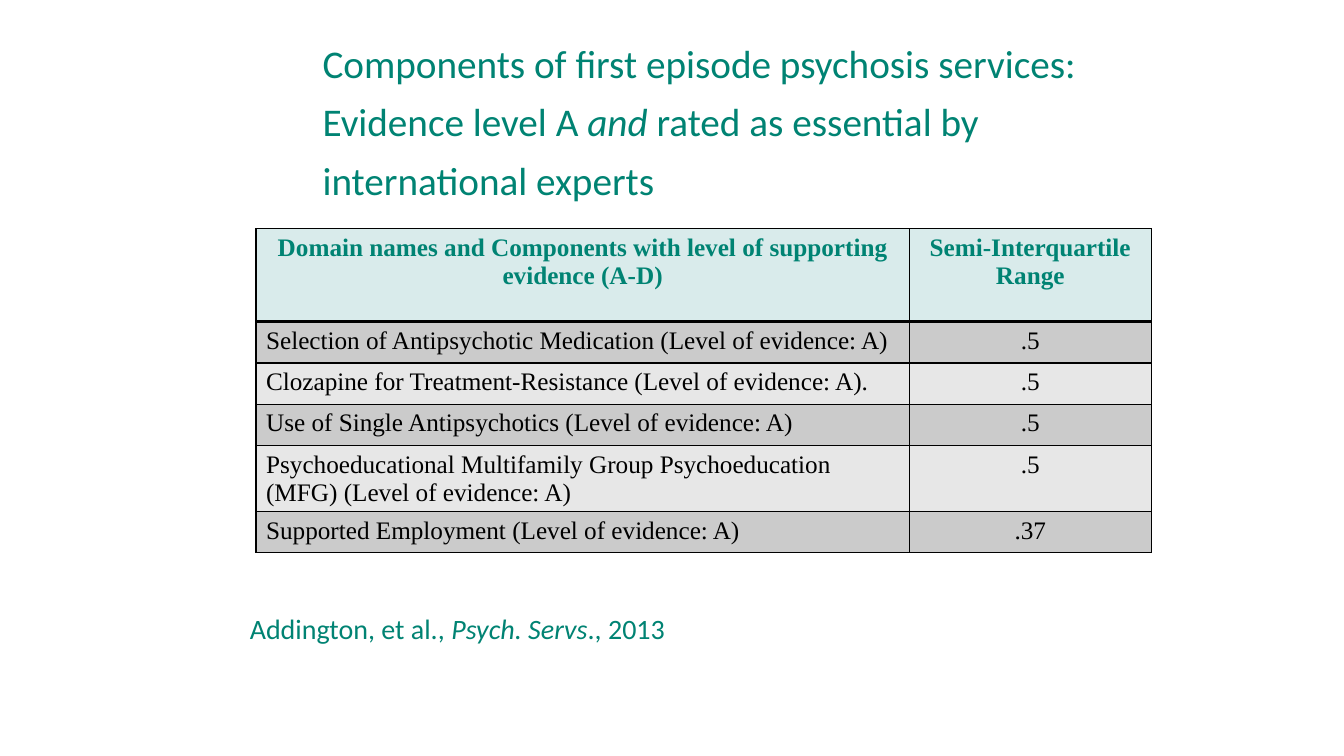
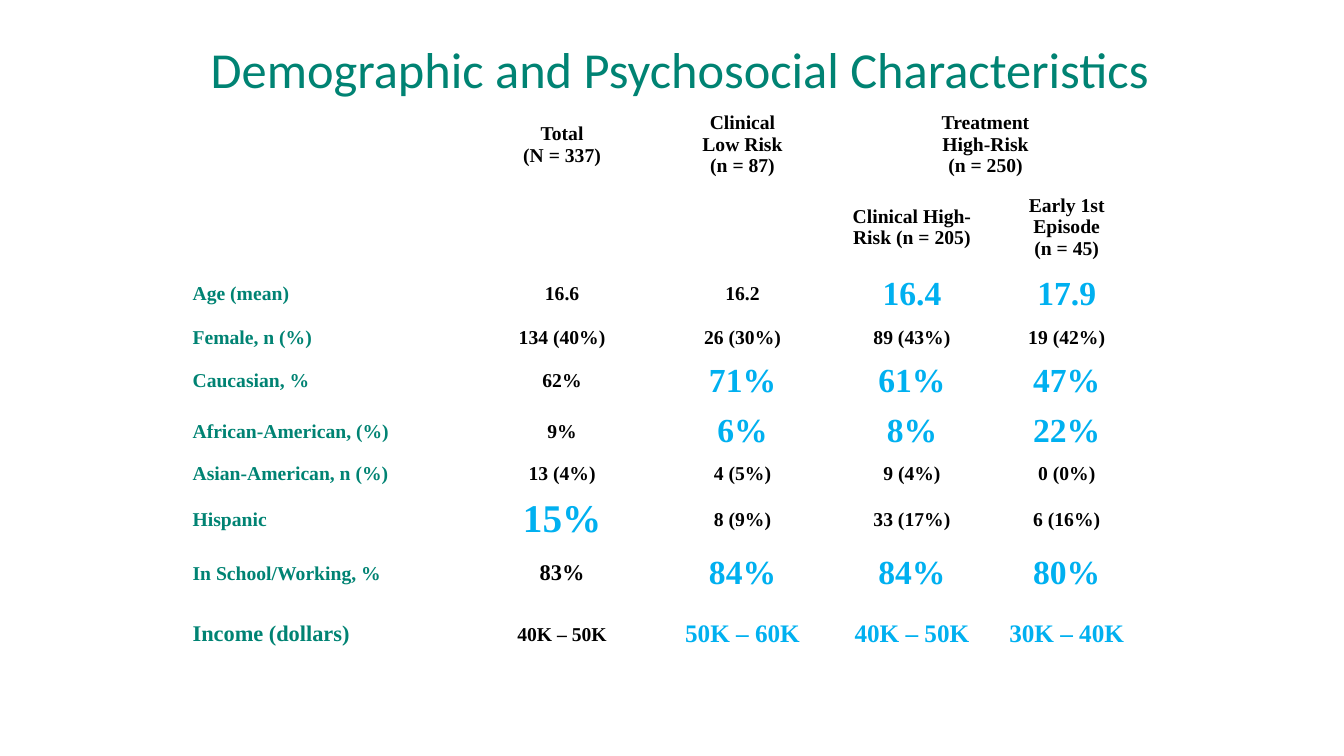
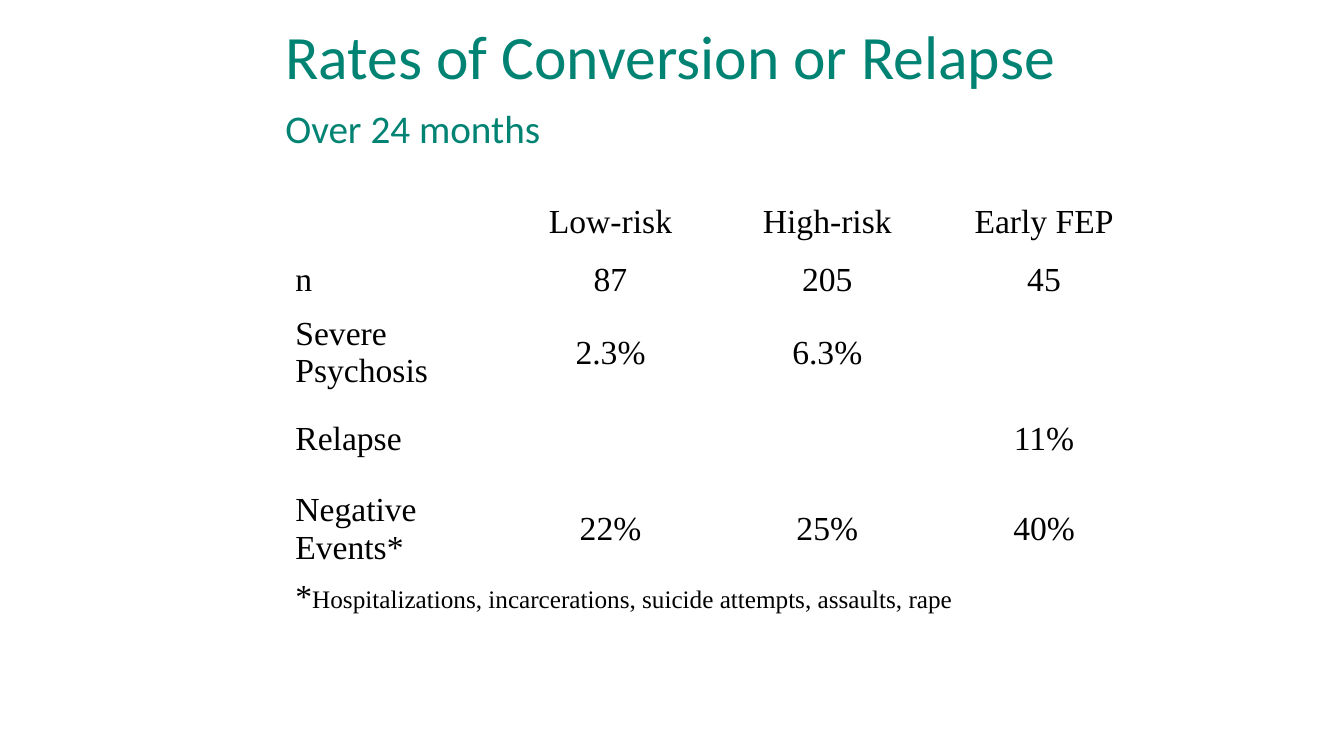
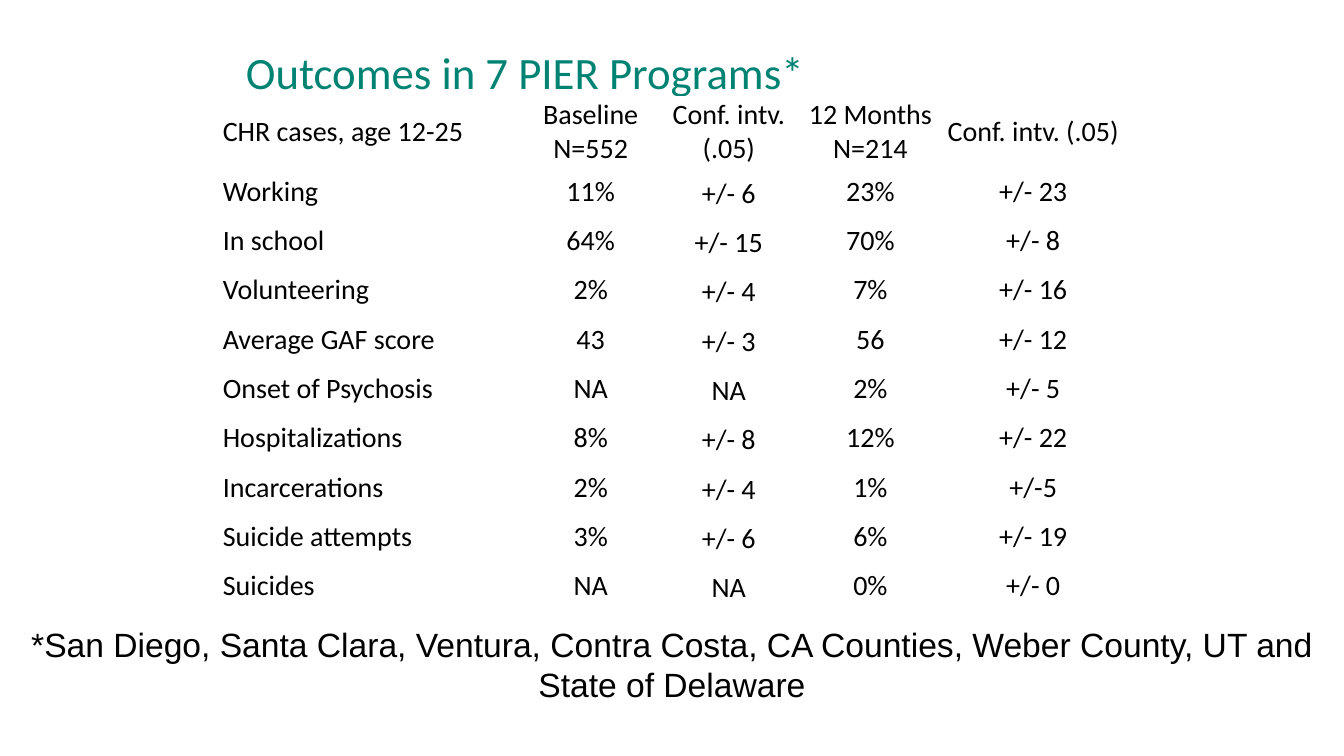
"""Build four slides of tables on first episode psychosis services."""
import pptx
import pptx.dml.color
import pptx.enum.text
import pptx.oxml
import pptx.oxml.ns
import pptx.util

WIDE, HIGH = pptx.util.Inches(13.33), pptx.util.Inches(7.5)
HUES = {"teal": "008373", "black": "000000", "sky": "00B0F0",
        "mint": "D9EBEB", "grey": "CBCBCB", "pale": "E7E7E7"}
SANS, SERIF, PLAIN = "Calibri", "Times New Roman", "Arial"
ALIGN = pptx.enum.text.PP_ALIGN
ANCHOR = pptx.enum.text.MSO_ANCHOR
INSET = (0.1, 0.05, 0.1, 0.05)


def across(share):
    """Return a percentage of the slide's width."""
    return round(WIDE * share / 100)


def down(share):
    """Return a percentage of the slide's height."""
    return round(HIGH * share / 100)


def place(at):
    """Turn left, top, width and height percentages into lengths."""
    left, top, width, height = at
    return across(left), down(top), across(width), down(height)


def tint(name):
    """Return a named colour."""
    return pptx.dml.color.RGBColor.from_string(HUES[name])


def style(font, size=None, hue=None, face=None, bold=None, slant=None):
    """Set the given traits of a font."""
    if size:
        font.size = pptx.util.Pt(size)
    if hue:
        font.color.rgb = tint(hue)
    if face:
        font.name = face
    if bold is not None:
        font.bold = bold
    if slant is not None:
        font.italic = slant


def write(frame, lines, align=ALIGN.LEFT, **look):
    """Fill a frame with lines, each a string or a list of (text, traits) runs."""
    for index, line in enumerate(lines):
        para = frame.paragraphs[0] if index == 0 else frame.add_paragraph()
        para.alignment = align
        style(para.font, **look)
        for text, traits in [(line, {})] if isinstance(line, str) else line:
            if text == "\n":
                para.add_line_break()
                continue
            run = para.add_run()
            run.text = text
            style(run.font, **traits)


def pad(item, inset):
    """Set the four margins of a frame or cell."""
    sides = ("margin_left", "margin_top", "margin_right", "margin_bottom")
    for side, size in zip(sides, inset):
        setattr(item, side, pptx.util.Inches(size))


def start(deck, left, top, width, size, runs):
    """Add a slide with its title."""
    slide = deck.slides.add_slide(deck.slide_layouts[5])
    title = slide.shapes.title
    title.left, title.top, title.width, title.height = place((left, top, width, 18.27))
    frame = title.text_frame
    frame.word_wrap = True
    frame.auto_size = pptx.enum.text.MSO_AUTO_SIZE.NONE
    frame.vertical_anchor = ANCHOR.MIDDLE
    pad(frame, (0, 0.05, 0, 0.05))
    write(frame, [runs], size=size, hue="teal", face=SANS)
    frame.paragraphs[0].line_spacing = pptx.util.Pt(42)
    return slide


def note(slide, at, runs, **look):
    """Add a text box of one paragraph."""
    frame = slide.shapes.add_textbox(*place(at)).text_frame
    frame.word_wrap = True
    write(frame, [runs], **look)


def edge(cell, side, width):
    """Draw one black border of a cell."""
    space = pptx.oxml.ns.nsdecls("a")
    line = pptx.oxml.parse_xml(
        f'<a:ln{side} {space} w="{pptx.util.Pt(width)}"><a:solidFill>'
        f'<a:srgbClr val="{HUES["black"]}"/></a:solidFill></a:ln{side}>')
    cell._tc.get_or_add_tcPr().append(line)


def grid(slide, left, top, cols, rows, cells, look, inset=INSET,
         anchor=ANCHOR.MIDDLE, spans=()):
    """Add a table; look(row, col) gives the traits of a cell's text."""
    at = place((left, top, sum(cols), sum(rows)))
    table = slide.shapes.add_table(len(rows), len(cols), *at).table
    table.first_row = table.horz_banding = False
    for col, share in zip(table.columns, cols):
        col.width = across(share)
    for row, share in zip(table.rows, rows):
        row.height = down(share)
    for first, last in spans:
        table.cell(*first).merge(table.cell(*last))
    for r, texts in enumerate(cells):
        for c, text in enumerate(texts):
            cell = table.cell(r, c)
            cell.fill.background()
            cell.vertical_anchor = anchor
            pad(cell, inset)
            if text:
                lines = text.split("\n") if isinstance(text, str) else [text]
                traits = {"align": ALIGN.CENTER if c else ALIGN.LEFT, **look(r, c)}
                write(cell.text_frame, lines, **traits)
    return table


def parts(deck):
    """Show the essential service components."""
    slide = start(deck, 24, 6.13, 63.47, 28, [
        ("Components of first episode psychosis services:", {}), ("\n", {}),
        ("Evidence level A ", {}), ("and", {"slant": True}),
        (" rated as essential by international experts", {})])
    cells = [
        ("Domain names and Components with level of supporting evidence (A-D)",
         "Semi-Interquartile\nRange"),
        ("Selection of Antipsychotic Medication (Level of evidence: A)", ".5"),
        ("Clozapine for Treatment-Resistance (Level of evidence: A).", ".5"),
        ("Use of Single Antipsychotics (Level of evidence: A)", ".5"),
        ("Psychoeducational Multifamily Group Psychoeducation\n"
         "(MFG) (Level of evidence: A)", ".5"),
        ("Supported Employment (Level of evidence: A)", ".37")]

    def look(r, c):
        """Set the header apart from the rows."""
        base = {"size": 18, "face": SERIF, "hue": "black"}
        if r == 0:
            base.update(hue="teal", bold=True, align=ALIGN.CENTER)
        return base

    rows = [12.27, 5.47, 5.47, 5.47, 8.67, 5.47]
    table = grid(slide, 19.05, 30.27, [48.61, 18], rows, cells, look, anchor=ANCHOR.TOP)
    for r in range(len(rows)):
        fill = "mint" if r == 0 else "grey" if r % 2 else "pale"
        for c in range(2):
            cell = table.cell(r, c)
            cell.fill.solid()
            cell.fill.fore_color.rgb = tint(fill)
            borders = {"L": 1, "R": 1, "T": 3 if r == 1 else 1, "B": 3 if r == 0 else 1}
            props = cell._tc.get_or_add_tcPr()
            paint = props[0]
            for side, width in borders.items():
                edge(cell, side, width)
            props.append(paint)
    note(slide, (17.85, 80.27, 34.58, 5.73), [
        ("Addington, et al., ", {}), ("Psych. Servs", {"slant": True}),
        ("., 2013", {})], size=20, hue="teal", face=SANS)


def people(deck):
    """Show the characteristics of the groups."""
    slide = start(deck, 15.68, 0, 75, 36,
                  [("Demographic and Psychosocial Characteristics", {})])
    cells = [
        ("", "Total\n(N = 337)", "Clinical\nLow Risk\n(n = 87)",
         "Treatment\nHigh-Risk\n(n = 250)", ""),
        ("", "", "", "Clinical High-Risk (n = 205)", "Early 1st\nEpisode\n(n = 45)"),
        ("Age (mean)", "16.6", "16.2", "16.4", "17.9"),
        ("Female, n (%)", "134 (40%)", "26 (30%)", "89 (43%)", "19 (42%)"),
        ("Caucasian, %", "62%", "71%", "61%", "47%"),
        ("African-American, (%)", "9%", "6%", "8%", "22%"),
        ("Asian-American, n (%)", "13 (4%)", "4 (5%)", "9 (4%)", "0 (0%)"),
        ("Hispanic", "15%", "8 (9%)", "33 (17%)", "6 (16%)"),
        ("In School/Working, %", "83%", "84%", "84%", "80%"),
        ("Income (dollars)", "40K – 50K", "50K – 60K", "40K – 50K", "30K – 40K")]
    bright = {2: ((3, 4), 24), 4: ((2, 3, 4), 24), 5: ((2, 3, 4), 24),
              7: ((1,), 28), 8: ((2, 3, 4), 24), 9: ((2, 3, 4), 18)}
    large = {(8, 1), (9, 0)}

    def look(r, c):
        """Stress the notable values."""
        cols, size = bright.get(r, ((), 14))
        if c in cols:
            hue = "sky"
        else:
            hue, size = "black" if c else "teal", 16 if (r, c) in large else 14
        return {"size": size, "hue": hue, "face": SERIF, "bold": True}

    grid(slide, 13.58, 13.73, [21.38, 13.73, 13.13, 12.08, 10.95],
         [10.8, 11.07, 6.67, 4.8, 6.67, 6.67, 4.53, 7.6, 6.67, 9.47],
         cells, look, spans=[((0, 3), (0, 4))])


def rates(deck):
    """Show conversion and relapse."""
    slide = start(deck, 21.23, 3.07, 63.47, 44, [
        ("Rates of Conversion or Relapse", {}), ("\n", {}),
        ("Over 24 months", {"size": 28})])
    foot = [("*", {}), ("Hospitalizations, incarcerations, suicide attempts, "
                        "assaults, rape", {"size": 18})]
    cells = [
        ("", "Low-risk", "High-risk", "Early FEP"),
        ("n", "87", "205", "45"),
        ("Severe Psychosis", "2.3%", "6.3%", ""),
        ("Relapse", "", "", "11%"),
        ("Negative Events*", "22%", "25%", "40%"),
        (foot, "", "", "")]
    table = grid(slide, 21.23, 25.33, [16.13] * 4, [8.13, 7.2, 12, 10.8, 13.07, 13.07],
                 cells, lambda r, c: {"size": 24, "hue": "black", "face": SERIF},
                 inset=(0.1, 0, 0.1, 0), spans=[((5, 0), (5, 3))])
    table.cell(5, 0).vertical_anchor = ANCHOR.TOP


def gains(deck):
    """Show the outcomes of the programs."""
    slide = start(deck, 18.3, 0, 63.47, 32, [("Outcomes in 7 PIER Programs*", {})])
    cells = [
        ("CHR cases, age 12-25", "Baseline\nN=552", "Conf. intv. (.05)",
         "12 Months\nN=214", "Conf. intv. (.05)"),
        ("Working", "11%", "+/- 6", "23%", "+/- 23"),
        ("In school", "64%", "+/- 15", "70%", "+/- 8"),
        ("Volunteering", "2%", "+/- 4", "7%", "+/- 16"),
        ("Average GAF score", "43", "+/- 3", "56", "+/- 12"),
        ("Onset of Psychosis", "NA", "NA", "2%", "+/- 5"),
        ("Hospitalizations", "8%", "+/- 8", "12%", "+/- 22"),
        ("Incarcerations", "2%", "+/- 4", "1%", "+/-5"),
        ("Suicide attempts", "3%", "+/- 6", "6%", "+/- 19"),
        ("Suicides", "NA", "NA", "0%", "+/- 0")]
    table = grid(slide, 16.5, 12.8, [22.13, 10.65, 9.9, 11.18, 13.05],
                 [9.07] + [6.53] * 9, cells,
                 lambda r, c: {"size": 20, "hue": "black", "face": SANS},
                 inset=(0.01, 0.01, 0.01, 0))
    for r in range(1, len(cells)):
        cell = table.cell(r, 2)
        cell.vertical_anchor = ANCHOR.BOTTOM
        cell.margin_bottom = pptx.util.Inches(0.05)
    note(slide, (0, 81.87, 100, 12.13),
         "*San Diego, Santa Clara, Ventura, Contra Costa, CA Counties, "
         "Weber County, UT and State of Delaware",
         align=ALIGN.CENTER, size=24, hue="black", face=PLAIN)


def main():
    """Build and save the deck."""
    deck = pptx.Presentation()
    deck.slide_width, deck.slide_height = WIDE, HIGH
    for build in (parts, people, rates, gains):
        build(deck)
    deck.save("out.pptx")


if __name__ == "__main__":
    main()
